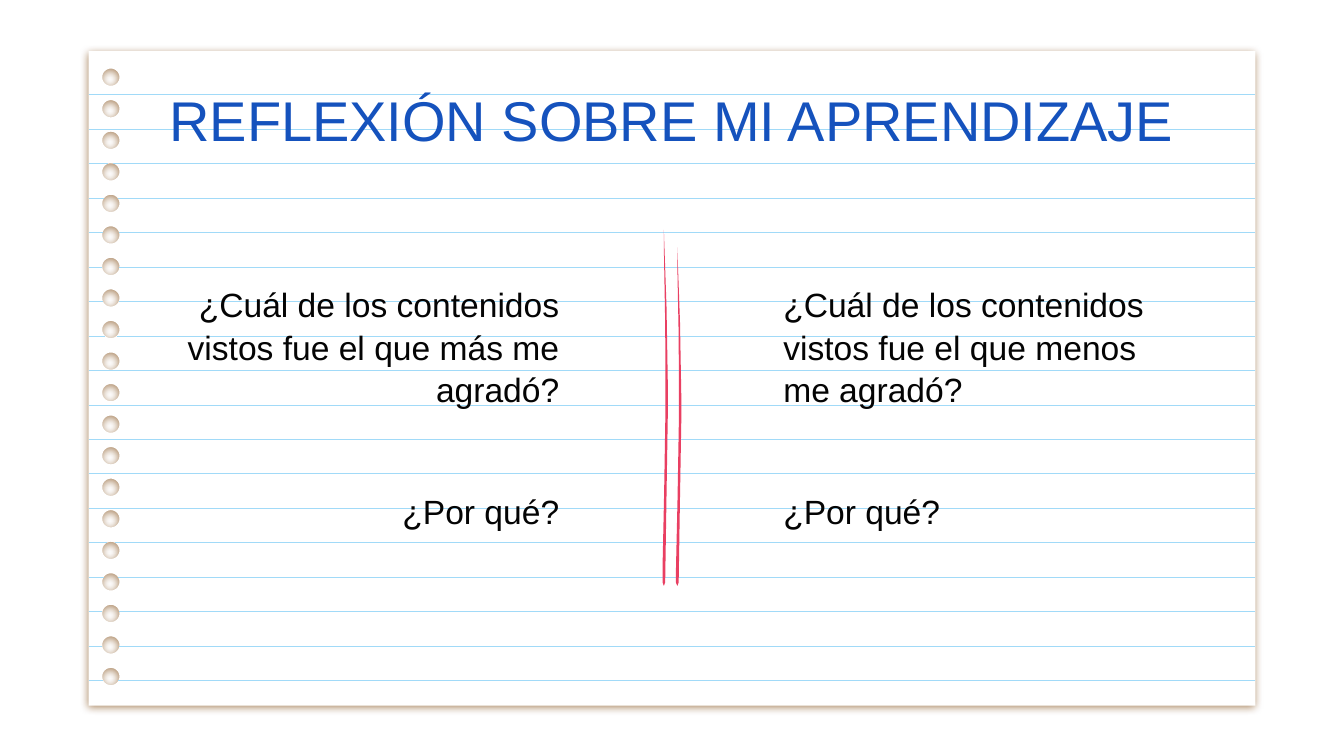
import math

from lxml import etree
from pptx import Presentation
from pptx.dml.color import RGBColor
from pptx.enum.shapes import MSO_CONNECTOR
from pptx.enum.text import MSO_ANCHOR, MSO_AUTO_SIZE, PP_ALIGN
from pptx.oxml import parse_xml
from pptx.oxml.ns import nsdecls, qn
from pptx.util import Inches, Pt

STRAIGHT = MSO_CONNECTOR.STRAIGHT
LEFT, CENTER, RIGHT = PP_ALIGN.LEFT, PP_ALIGN.CENTER, PP_ALIGN.RIGHT
TOP, MIDDLE = MSO_ANCHOR.TOP, MSO_ANCHOR.MIDDLE
NO_AUTOFIT = MSO_AUTO_SIZE.NONE

WIDTH, HEIGHT = 10, 5.625
FONT = "Arial"
PAPER, RULE, SHADOW = "FFFFFF", "A1DAF8", "783F04"
BLUE, INK, PEN = "1552BD", "040404", "E93F62"

SHEET = (0.66, 0.38, 8.68, 4.87)
HOLE_COUNT, HOLE_RADIUS = 20, 0.064
HOLE_X, HOLE_TOP, HOLE_PITCH = 0.165, 0.195, 0.2347
RULE_COUNT, RULE_TOP, RULE_PITCH = 18, 0.325, 0.2564

# Outline of a pen stroke as shares of its width and height
STROKE = [(0.25, 0), (0.25, 0.05), (0.5, 0.26), (0.55, 0.44), (0.55, 0.5),
          (0.3, 0.74), (0, 0.95), (0, 0.99), (0.25, 1), (0.5, 0.99),
          (0.75, 0.74), (1, 0.5), (1, 0.45), (0.75, 0.22)]


def color(value):
    return RGBColor.from_string(value)


def add_outline(slide, contours, fill):
    """Draw closed contours, given in inches, as one filled shape."""
    contours = [[(Inches(x), Inches(y)) for x, y in contour] for contour in contours]
    builder = slide.shapes.build_freeform(*contours[0][0], scale=1.0)
    for index, contour in enumerate(contours):
        if index:
            builder.move_to(*contour[0])
        builder.add_line_segments(contour[1:], close=True)
    shape = builder.convert_to_shape()
    shape.shadow.inherit = False
    shape.fill.solid()
    shape.fill.fore_color.rgb = color(fill)
    shape.line.fill.background()
    return shape


def add_rule(slide, start, end, y):
    line = slide.shapes.add_connector(
        STRAIGHT, Inches(start), Inches(y), Inches(end), Inches(y))
    line.line.color.rgb = color(RULE)
    line.line.width = Pt(0.4)
    etree.SubElement(line._element.spPr, qn("a:effectLst"))


def circle(x, y, radius, steps=32):
    angles = [-2 * math.pi * step / steps for step in range(steps)]
    return [(x + radius * math.cos(a), y + radius * math.sin(a)) for a in angles]


def add_sheet(slide, box):
    """Draw the punched paper and the rules, which stop at the holes."""
    left, top, width, height = box
    right, bottom = left + width, top + height
    hole_x = left + HOLE_X
    holes = [top + HOLE_TOP + HOLE_PITCH * i for i in range(HOLE_COUNT)]
    edge = [(left, top), (right, top), (right, bottom), (left, bottom)]
    punched = [circle(hole_x, y, HOLE_RADIUS) for y in holes]
    paper = add_outline(slide, [edge] + punched, PAPER)
    effects = paper._element.spPr.find(qn("a:effectLst"))
    effects.append(parse_xml(
        f'<a:outerShdw {nsdecls("a")} blurRad="{Pt(4.5)}" dist="{Pt(1.5)}" '
        f'dir="5400000" algn="bl" rotWithShape="0"><a:srgbClr val="{SHADOW}">'
        '<a:alpha val="61000"/></a:srgbClr></a:outerShdw>'))

    for row in range(RULE_COUNT):
        y = top + RULE_TOP + RULE_PITCH * row
        gap = min(abs(y - hole) for hole in holes)
        if gap < HOLE_RADIUS:
            half = math.sqrt(HOLE_RADIUS ** 2 - gap ** 2)
            add_rule(slide, left, hole_x - half, y)
            add_rule(slide, hole_x + half, right, y)
        else:
            add_rule(slide, left, right, y)


def add_pen_stroke(slide, box):
    left, top, width, height = box
    points = [(left + x * width, top + y * height) for x, y in STROKE]
    add_outline(slide, [points], PEN)


def write(shape, text, size, ink, alignment, anchor, spacing):
    frame = shape.text_frame
    frame.word_wrap = True
    frame.auto_size = NO_AUTOFIT
    frame.vertical_anchor = anchor
    frame.margin_left = frame.margin_right = Inches(0.1)
    frame.margin_top = frame.margin_bottom = Inches(0.1)
    paragraph = frame.paragraphs[0]
    paragraph.alignment = alignment
    paragraph.line_spacing = spacing
    run = paragraph.add_run()
    run.text = text
    run.font.name = FONT
    run.font.size = Pt(size)
    run.font.color.rgb = color(ink)


def add_title(slide, box, text):
    title = slide.shapes.title
    title.left, title.top, title.width, title.height = map(Inches, box)
    write(title, text, 30, BLUE, CENTER, MIDDLE, 1.0)


def add_questions(slide, box, questions, alignment):
    """Stack the questions of one column, one per row."""
    left, top, width, row_pitch = box
    for row, question in enumerate(questions):
        shape = slide.shapes.add_textbox(
            Inches(left), Inches(top + row * row_pitch), Inches(width), Inches(0.96))
        write(shape, question, 18, INK, alignment, TOP, 1.05)


def main():
    presentation = Presentation()
    presentation.slide_width = Inches(WIDTH)
    presentation.slide_height = Inches(HEIGHT)
    slide = presentation.slides.add_slide(presentation.slide_layouts[5])
    add_sheet(slide, SHEET)
    # Bring the title in front of the paper
    slide.shapes._spTree.append(slide.shapes.title._element)
    add_title(slide, (0.98, 0.54, 8.04, 0.69), "REFLEXIÓN SOBRE MI APRENDIZAJE")
    columns = [(1.28, "más", RIGHT), (5.73, "menos", LEFT)]
    for left, degree, alignment in columns:
        questions = [f"¿Cuál de los contenidos vistos fue el que {degree} me agradó?",
                     "¿Por qué?"]
        add_questions(slide, (left, 2, 2.98, 1.54), questions, alignment)
    add_pen_stroke(slide, (4.93, 1.71, 0.04, 2.65))
    add_pen_stroke(slide, (5.03, 1.84, 0.04, 2.52))
    presentation.save("out.pptx")


if __name__ == "__main__":
    main()
